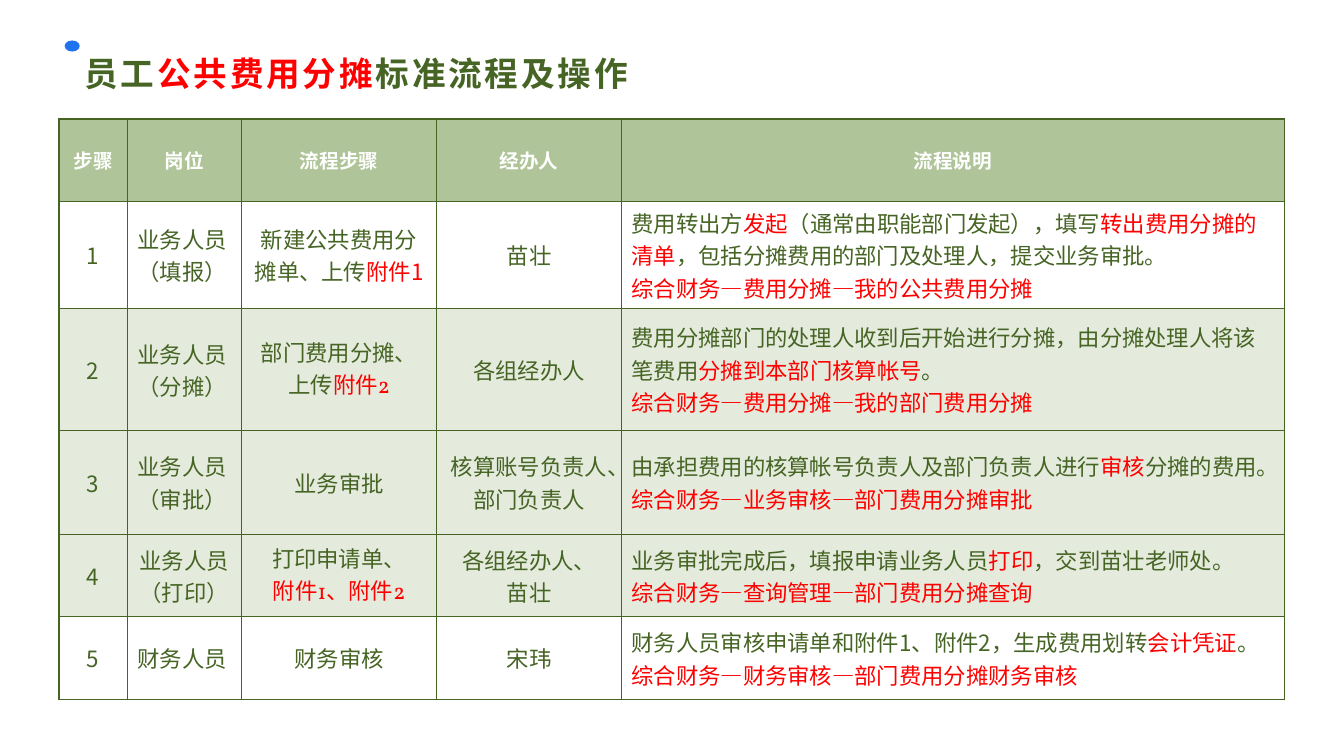
from dataclasses import dataclass

from lxml.etree import SubElement
from pptx import Presentation
from pptx.dml.color import RGBColor
from pptx.enum.shapes import MSO_SHAPE as Preset
from pptx.enum.text import MSO_ANCHOR as Anchor, PP_ALIGN as Align
from pptx.oxml import parse_xml
from pptx.oxml.ns import nsdecls, qn
from pptx.slide import Slide
from pptx.table import Table, _Cell as Cell
from pptx.util import Cm, Pt

COLORS = {
    "green": "466424",
    "red": "FF0000",
    "white": "FFFFFF",
    "header": "AFC498",
    "band": "E4EBDD",
    "dot": "2073EE",
}
SANS, SERIF, ROUTE_FONT = "Noto Sans CJK SC", "Vollkorn", "Arial"
COLUMN_WIDTHS = (1.73, 2.87, 4.93, 4.65, 16.71)
ROW_HEIGHTS = (2.08, 2.64, 3.07, 2.62, 2.08, 2.08)
HEADINGS = ("步骤", "岗位", "流程步骤", "经办人", "流程说明")


@dataclass(frozen=True)
class Step:
    post: str
    action: str
    handler: str
    note: str
    route: str
    fill: str = "band"
    font: str = SERIF
    post_align: Align = Align.LEFT


STEPS = (
    Step("业务人员（填报）", "新建公共费用分摊单、上传*附件1*", "苗壮",
         "费用转出方*发起*（通常由职能部门发起），填写*转出费用分摊的清单*"
         "，包括分摊费用的部门及处理人，提交业务审批。",
         "综合财务—费用分摊—我的公共费用分摊", fill="white", font=SANS),
    Step("业务人员（分摊）", "部门费用分摊、上传*附件2*", "各组经办人",
         "费用分摊部门的处理人收到后开始进行分摊，由分摊处理人将该笔费用"
         "*分摊到本部门核算帐号*。",
         "综合财务—费用分摊—我的部门费用分摊"),
    Step("业务人员（审批）", "业务审批", "核算账号负责人、\n部门负责人",
         "由承担费用的核算帐号负责人及部门负责人进行*审核*分摊的费用。",
         "综合财务—业务审核—部门费用分摊审批"),
    Step("业务人员（打印）", "打印申请单、\n*附件1、附件2*", "各组经办人、\n苗壮",
         "业务审批完成后，填报申请业务人员*打印*，交到苗壮老师处。",
         "综合财务—查询管理—部门费用分摊查询", post_align=Align.CENTER),
    Step("财务人员", "财务审核", "宋玮",
         "财务人员审核申请单和附件1、附件2，生成费用划转*会计凭证*。",
         "综合财务—财务审核—部门费用分摊财务审核", fill="white"),
)


def write(frame, text: str, *, size: float = 16, font: str = SANS,
          color: str = "green", bold: bool = False, align: Align = Align.CENTER,
          before: float = 0, spacing: float = 0, append: bool = False) -> None:
    for index, line in enumerate(text.split("\n")):
        paragraph = frame.add_paragraph() if append or index else frame.paragraphs[0]
        paragraph.alignment = align
        paragraph.space_before = Pt(before)
        for part, words in enumerate(line.split("*")):
            if not words:
                continue
            run = paragraph.add_run()
            run.text = words
            run.font.size, run.font.bold, run.font.name = Pt(size), bold, font
            run.font.color.rgb = RGBColor.from_string(COLORS["red" if part % 2 else color])
            properties = run.font._element
            SubElement(properties, qn("a:ea")).set("typeface", SANS)
            if spacing:
                properties.set("spc", str(round(spacing * 100)))


def format_cell(cell: Cell, fill: str, row: int, column: int) -> None:
    cell.vertical_anchor = Anchor.MIDDLE
    cell.fill.solid()
    cell.fill.fore_color.rgb = RGBColor.from_string(COLORS[fill])
    outer_sides = {
        "L": column == 0,
        "R": column == len(COLUMN_WIDTHS) - 1,
        "T": row == 0,
        "B": False,
    }
    properties = cell._tc.get_or_add_tcPr()
    for position, (side, outer) in enumerate(outer_sides.items()):
        border = parse_xml(
            f'<a:ln{side} {nsdecls("a")} w="{Pt(1.5 if outer else 1)}"><a:solidFill>'
            f'<a:srgbClr val="{COLORS["green"]}"/></a:solidFill></a:ln{side}>')
        properties.insert(position, border)


def add_title(slide: Slide) -> None:
    dot = slide.shapes.add_shape(Preset.OVAL, Cm(1.63), Cm(1.02), Cm(0.38), Cm(0.28))
    dot.shadow.inherit = False
    dot.fill.solid()
    dot.fill.fore_color.rgb = RGBColor.from_string(COLORS["dot"])
    dot.line.fill.background()

    title = slide.shapes.title
    title.left, title.top, title.width, title.height = Cm(1.85), Cm(1.22), Cm(30.15), Cm(1.22)
    frame = title.text_frame
    frame.vertical_anchor = Anchor.MIDDLE
    frame.margin_left, frame.margin_right = Cm(0.28), Cm(0.2)
    frame.margin_top = frame.margin_bottom = Cm(0.1)
    write(frame, "员工*公共费用分摊*标准流程及操作", size=24, bold=True,
          align=Align.LEFT, spacing=2)


def fill_step(table: Table, row: int, step: Step) -> None:
    number, post, action, handler, note = (
        table.cell(row, column).text_frame for column in range(len(HEADINGS)))
    write(number, str(row), before=3)
    write(post, step.post, font=step.font, align=step.post_align)
    write(action, step.action, font=step.font)
    write(handler, step.handler, font=step.font)
    write(note, step.note, align=Align.LEFT)
    write(note, step.route, font=ROUTE_FONT, color="red", align=Align.LEFT, append=True)


def add_process_table(slide: Slide) -> None:
    table = slide.shapes.add_table(
        len(ROW_HEIGHTS), len(COLUMN_WIDTHS), Cm(1.48), Cm(3),
        Cm(sum(COLUMN_WIDTHS)), Cm(sum(ROW_HEIGHTS))).table
    table.first_row = table.horz_banding = False
    for column, width in zip(table.columns, COLUMN_WIDTHS):
        column.width = Cm(width)
    for row, height in zip(table.rows, ROW_HEIGHTS):
        row.height = Cm(height)

    fills = ("header", *(step.fill for step in STEPS))
    for row, fill in enumerate(fills):
        for column in range(len(HEADINGS)):
            format_cell(table.cell(row, column), fill, row, column)
    for column, heading in enumerate(HEADINGS):
        write(table.cell(0, column).text_frame, heading, size=14, color="white",
              bold=True, before=3)
    for row, step in enumerate(STEPS, start=1):
        fill_step(table, row, step)


def main() -> None:
    deck = Presentation()
    deck.slide_width, deck.slide_height = Cm(33.87), Cm(19.05)
    slide = deck.slides.add_slide(deck.slide_layouts[5])
    add_title(slide)
    add_process_table(slide)
    deck.save("out.pptx")


if __name__ == "__main__":
    main()
